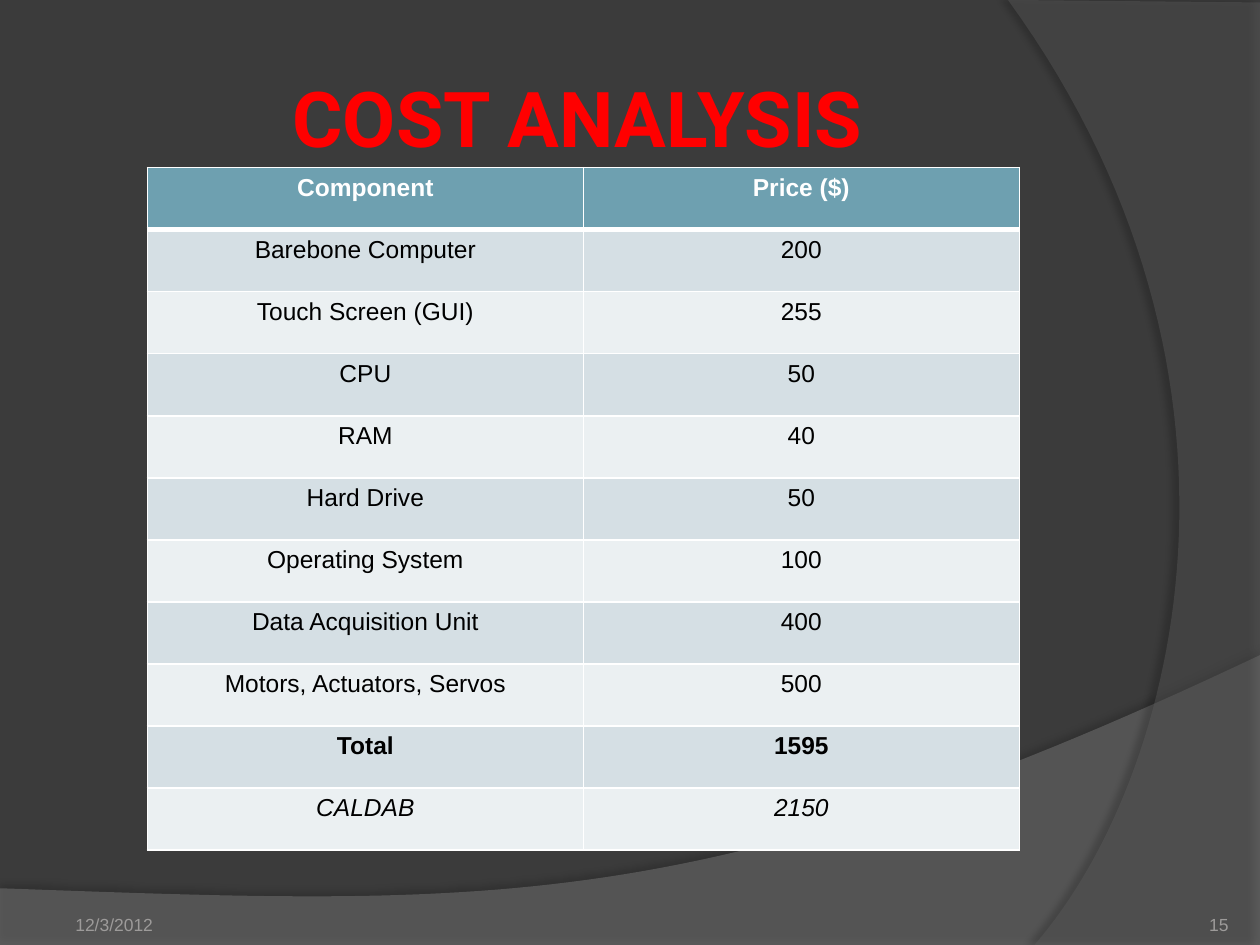
from lxml.etree import SubElement
from pptx import Presentation
from pptx.dml.color import RGBColor
from pptx.enum.text import MSO_ANCHOR as Anchor, PP_ALIGN as Align
from pptx.oxml.ns import qn
from pptx.util import Inches, Pt

COSTS = [
    ("Component", "Price ($)"),
    ("Barebone Computer", "200"),
    ("Touch Screen (GUI)", "255"),
    ("CPU", "50"),
    ("RAM", "40"),
    ("Hard Drive", "50"),
    ("Operating System", "100"),
    ("Data Acquisition Unit", "400"),
    ("Motors, Actuators, Servos", "500"),
    ("Total", "1595"),
    ("CALDAB", "2150"),
]
HEADER_FILL = "6EA0B0"
BAND_FILLS = ["EBF0F2", "D5DFE4"]
CURVE_STEPS = 60


def paint(fill, color):
    fill.solid()
    fill.fore_color.rgb = RGBColor.from_string(color)


def add_color(parent, color, opacity=100):
    node = SubElement(parent, qn("a:srgbClr"), val=color)
    if opacity < 100:
        SubElement(node, qn("a:alpha"), val=str(opacity * 1000))


def add_line(parent, tag, color, points):
    line = SubElement(parent, qn(tag), w=str(Pt(points)))
    add_color(SubElement(line, qn("a:solidFill")), color)


def write(frame, text, color, align=Align.LEFT, **formats):
    para = frame.paragraphs[0]
    para.alignment = align
    span = para.add_run()
    span.text = text
    span.font.color.rgb = RGBColor.from_string(color)
    for name, value in formats.items():
        setattr(span.font, name, value)
    return span


def set_frame(frame, anchor, left, top, right, bottom):
    formats = {
        "word_wrap": True,
        "vertical_anchor": anchor,
        "margin_left": Inches(left),
        "margin_top": Inches(top),
        "margin_right": Inches(right),
        "margin_bottom": Inches(bottom),
    }
    for name, value in formats.items():
        setattr(frame, name, value)


def curve(*controls):
    points = []
    for step in range(CURVE_STEPS + 1):
        t = step / CURVE_STEPS
        weights = [(1 - t) ** 3, 3 * t * (1 - t) ** 2, 3 * t * t * (1 - t), t ** 3]
        points.append([sum(w * c[axis] for w, c in zip(weights, controls))
                       for axis in (0, 1)])
    return points


def add_wave(page, points, color, opacity, shadow):
    corners = [(Inches(x), Inches(y)) for x, y in points]
    builder = page.shapes.build_freeform(*corners[0])
    builder.add_line_segments(corners[1:], close=True)
    wave = builder.convert_to_shape()
    paint(wave.fill, color)
    tint = wave.element.spPr.find(qn("a:solidFill"))[0]
    SubElement(tint, qn("a:alpha"), val=str(opacity * 1000))
    wave.line.fill.background()
    wave.shadow.inherit = False
    effects = wave.element.spPr.find(qn("a:effectLst"))
    darkness, blur, distance, angle = shadow
    outer = SubElement(effects, qn("a:outerShdw"), blurRad=str(Pt(blur)),
                       dist=str(Pt(distance)), dir=str(angle * 60000),
                       algn="ctr", rotWithShape="0")
    add_color(outer, "000000", darkness)


def add_title(page, text):
    title = page.shapes.title
    place = {"left": 0.5, "top": 0.3, "width": 8.17, "height": 1.25}
    for name, value in place.items():
        setattr(title, name, Inches(value))
    set_frame(title.text_frame, Anchor.MIDDLE, 0.05, 0.05, 0.05, 0.05)
    span = write(title.text_frame, text, "FF0000", Align.CENTER,
                 name="Roboto", size=Pt(44), bold=True)
    properties = span.font._element
    add_line(properties, "a:ln", "5DD4FF", 0.39)
    properties.insert(0, properties[-1])
    title.element.getparent().append(title.element)


def add_footer(page, text, left, width, align, margins):
    box = page.shapes.add_textbox(Inches(left), Inches(7.02), Inches(width), Inches(0.4))
    set_frame(box.text_frame, Anchor.BOTTOM, *margins)
    write(box.text_frame, text, "9D9B9A", align, name="Arial", size=Pt(10))


def add_cost_table(page):
    table = page.shapes.add_table(len(COSTS), 2, Inches(1.17), Inches(1.33),
                                  Inches(6.92), Inches(5.42)).table
    last = len(COSTS) - 1
    for index, record in enumerate(COSTS):
        header = index == 0
        widths = {"L": 1, "R": 1, "T": 3 if index == 1 else 1, "B": 3 if header else 1}
        for cell, text in zip(table.rows[index].cells, record):
            for side, points in widths.items():
                add_line(cell._tc.get_or_add_tcPr(), f"a:ln{side}", "FFFFFF", points)
            paint(cell.fill, HEADER_FILL if header else BAND_FILLS[index % 2])
            write(cell.text_frame, text, "FFFFFF" if header else "000000", Align.CENTER,
                  name="Arial", size=Pt(14), bold=header or record[0] == "Total",
                  italic=index == last)


def main():
    deck = Presentation()
    deck.slide_width, deck.slide_height = Inches(10), Inches(7.5)
    page = deck.slides.add_slide(deck.slide_layouts[5])
    paint(page.background.fill, "3B3B3B")
    floor = curve((10, 5.2), (5.59, 7.29), (3.91, 7.19), (0, 7.05))
    add_wave(page, [(0, 7.5), (10, 7.5)] + floor, "7F7F7F", 45, (35, 4, 3.5, 270))
    side = curve((8.21, 7.5), (9.35, 6.19), (10.18, 3), (8, 0))
    add_wave(page, [(10, 0.02), (10, 7.5)] + side, "5E5E5E", 40, (45, 4, 4, 180))
    add_title(page, "COST ANALYSIS")
    add_footer(page, "12/3/2012", 0.5, 2.33, Align.LEFT, (0.1, 0.05, 0.1, 0))
    add_footer(page, "15", 8.92, 0.83, Align.RIGHT, (0, 0, 0, 0))
    add_cost_table(page)
    deck.save("out.pptx")


if __name__ == "__main__":
    main()
